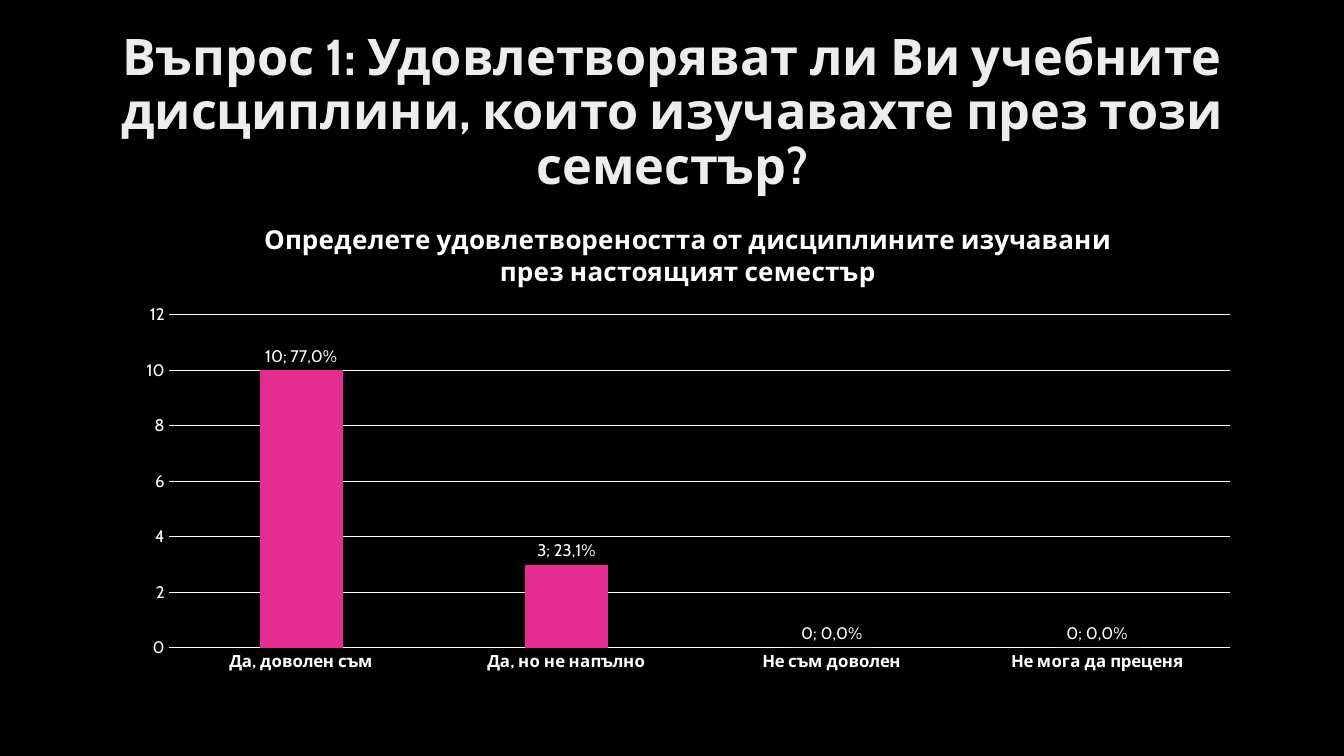
from pptx import Presentation
from pptx.chart import data as chart_data
from pptx.dml.color import RGBColor
from pptx.enum import chart as chart_enum, text
from pptx.util import Inches, Pt

BLACK = RGBColor(0x00, 0x00, 0x00)
WHITE = RGBColor(0xFF, 0xFF, 0xFF)
TITLE_GRAY = RGBColor(0xED, 0xED, 0xED)
PINK = RGBColor(0xE3, 0x2D, 0x91)
FONT = "Cabin"

QUESTION = ("Въпрос 1: Удовлетворяват ли Ви учебните дисциплини, "
            "които изучавахте през този семестър?")
CHART_TITLE = ("Определете удовлетвореността от дисциплините изучавани "
               "през настоящият семестър")
ANSWERS = [
    ("Да, доволен съм", 10, "77,0%"),
    ("Да, но не напълно", 3, "23,1%"),
    ("Не съм доволен", 0, "0,0%"),
    ("Не мога да преценя", 0, "0,0%"),
]


def style_font(font, size, color=WHITE, bold=False):
    font.name = FONT
    font.size = Pt(size)
    font.bold = bold
    font.color.rgb = color


def add_title(slide, left, top, width, height):
    shape = slide.shapes.add_textbox(left, top, width, height)
    frame = shape.text_frame
    frame.word_wrap = True
    frame.vertical_anchor = text.MSO_ANCHOR.MIDDLE
    frame.text = QUESTION
    paragraph = frame.paragraphs[0]
    paragraph.alignment = text.PP_ALIGN.CENTER
    paragraph.line_spacing = 0.9
    style_font(paragraph.runs[0].font, 36, TITLE_GRAY, bold=True)


def style_axes(chart):
    for axis, bold in ((chart.category_axis, True), (chart.value_axis, False)):
        axis.major_tick_mark = chart_enum.XL_TICK_MARK.NONE
        axis.minor_tick_mark = chart_enum.XL_TICK_MARK.NONE
        style_font(axis.tick_labels.font, 12, bold=bold)

    value_axis = chart.value_axis
    value_axis.minimum_scale, value_axis.maximum_scale = 0, 12
    value_axis.major_unit = 2
    value_axis.format.line.fill.background()
    for line in (chart.category_axis.format.line,
                 value_axis.major_gridlines.format.line):
        line.color.rgb = WHITE
        line.width = Pt(0.75)


def label_columns(series):
    labels = series.data_labels
    labels.show_value = True
    labels.position = chart_enum.XL_LABEL_POSITION.OUTSIDE_END
    style_font(labels.font, 12)
    for index, (_, count, share) in enumerate(ANSWERS):
        label = series.points[index].data_label
        label.text_frame.text = f"{count}; {share}"
        style_font(label.text_frame.paragraphs[0].runs[0].font, 12)
        label.position = chart_enum.XL_LABEL_POSITION.OUTSIDE_END


def add_answer_chart(slide, left, top, width, height):
    answers = chart_data.CategoryChartData()
    answers.categories = [answer for answer, _, _ in ANSWERS]
    answers.add_series(CHART_TITLE, [count for _, count, _ in ANSWERS])
    chart = slide.shapes.add_chart(
        chart_enum.XL_CHART_TYPE.COLUMN_CLUSTERED,
        left, top, width, height, answers).chart
    style_font(chart.font, 10)
    chart.has_legend = False

    # Chart title
    chart.has_title = True
    title = chart.chart_title
    title.include_in_layout = False
    title.text_frame.text = CHART_TITLE
    style_font(title.text_frame.paragraphs[0].runs[0].font, 18.6, bold=True)

    # Columns
    plot = chart.plots[0]
    plot.gap_width = 219
    plot.overlap = -27
    plot.vary_by_categories = False
    series = plot.series[0]
    series.format.fill.solid()
    series.format.fill.fore_color.rgb = PINK

    style_axes(chart)
    label_columns(series)


def main():
    presentation = Presentation()
    presentation.slide_width = Inches(13.33)
    presentation.slide_height = Inches(7.5)
    slide = presentation.slides.add_slide(presentation.slide_layouts[6])
    slide.background.fill.solid()
    slide.background.fill.fore_color.rgb = BLACK

    add_title(slide, Inches(0.92), Inches(0.4), Inches(11.5), Inches(1.45))
    add_answer_chart(slide, Inches(1.23), Inches(2), Inches(11.19), Inches(4.76))
    presentation.save("out.pptx")


if __name__ == "__main__":
    main()
